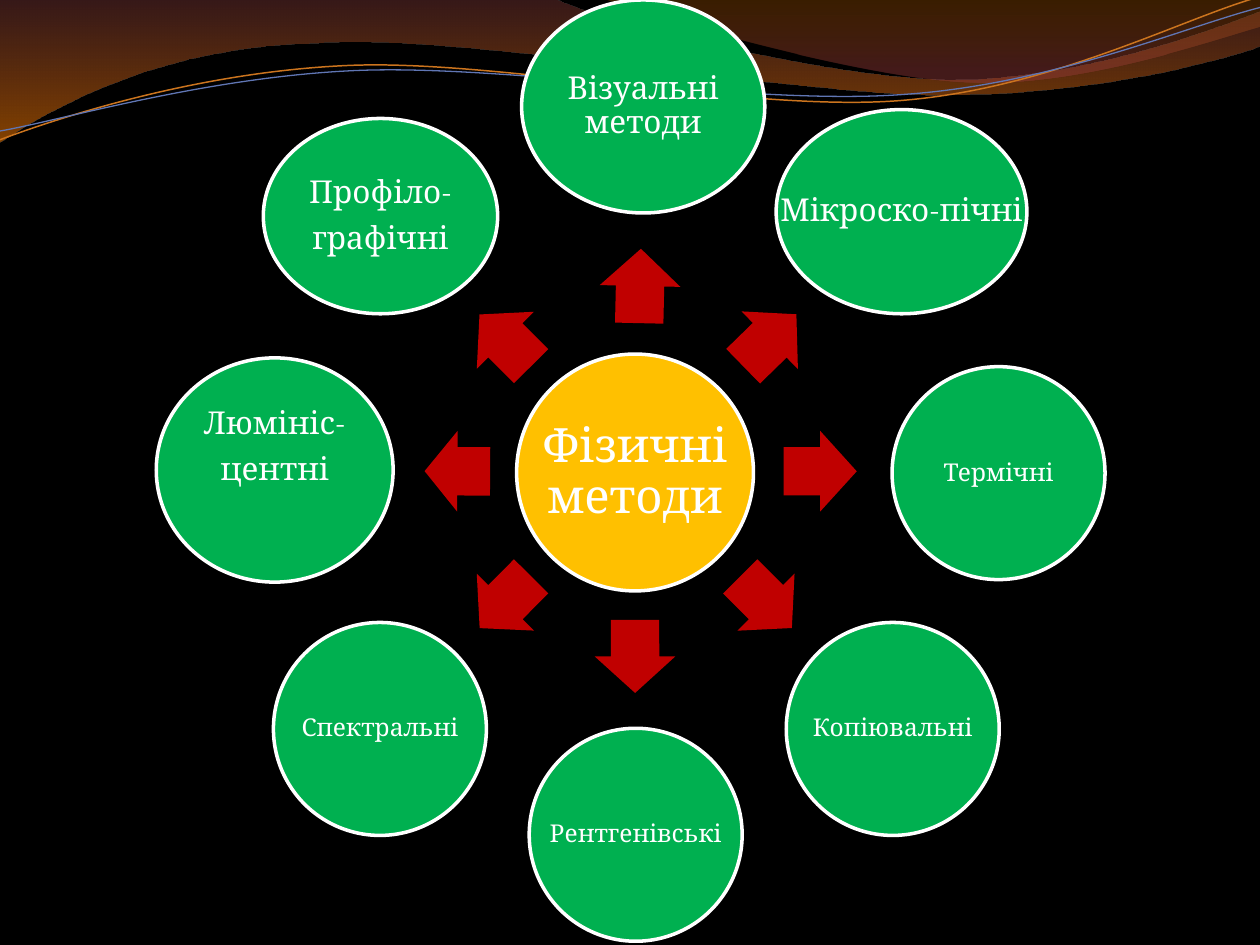
import math
from lxml import etree
from pptx import Presentation, util as u
from pptx.dml.color import RGBColor
from pptx.enum import shapes, text
from pptx.oxml.ns import qn

COLORS = {
    "back": "000000", "white": "FFFFFF", "hub": "FFC000", "method": "00B050",
    "arrow": "C00000", "plum": "793737", "orange": "F07800", "amber": "C06203",
    "brick": "973B3B", "copper": "CB741E", "blue": "6076B4",
}
rgb = {name: RGBColor.from_string(value) for name, value in COLORS.items()}

prs = Presentation()
prs.slide_width, prs.slide_height = u.Inches(10), u.Inches(7.5)
col = prs.slide_width / 10
row = prs.slide_height / 7.5
s = prs.slides.add_slide(prs.slide_layouts[6])
s.background.fill.solid()
s.background.fill.fore_color.rgb = rgb["back"]


def add_wave(steps, closed, tilt=0, cx=0, cy=0):
    cos, sin = math.cos(math.radians(tilt)), math.sin(math.radians(tilt))
    points = []
    for step in steps:
        for x, y in zip(step[::2], step[1::2]):
            dx, dy = x - cx, y - cy
            points.append((round((cx + dx * cos - dy * sin) * col),
                           round((cy + dx * sin + dy * cos) * row)))
    fb = s.shapes.build_freeform(*points[0])
    fb.add_line_segments(points[1:], close=closed)
    sp = fb.convert_to_shape()
    sp.shadow.inherit = False
    sp.rotation = -tilt
    nodes = iter(list(sp._element.spPr.iter(qn("a:lnTo"))))
    for step in steps[1:]:
        group = [next(nodes) for _ in step[::2]]
        if len(group) == 3:
            curve = etree.Element(qn("a:cubicBezTo"))
            group[0].addprevious(curve)
            for node in group:
                curve.append(node[0])
                node.getparent().remove(node)
    return sp


def add_preset(kind, box, color):
    sp = s.shapes.add_shape(kind, *box)
    sp.shadow.inherit = False
    sp.fill.solid()
    sp.fill.fore_color.rgb = rgb[color]
    sp.line.fill.background()
    return sp


bands = [
    ([(0, 0), (4.4, -0.01), (4.76, 0.17, 6.64, 0.63, 7.58, 0.63),
      (8.53, 0.63, 9.58, 0.26, 10, 0.09), (10.01, 0.36),
      (9.83, 0.44, 8.7, 0.76, 7.46, 0.75), (6.22, 0.75, 3.82, 0.28, 2.57, 0.34),
      (1.29, 0.36, 0.46, 0.83, -0.01, 1.13), (0, 0)],
     [(0, "plum", 45), (1, "orange", 55)]),
    ([(4.79, -0.01), (5.09, 0.11, 6.82, 0.62, 7.69, 0.65),
      (8.56, 0.69, 9.61, 0.32, 10, 0.21), (10, 0), (4.79, -0.01)],
     [(0, "amber", 30), (0.8, "brick", 45)]),
]
for steps, stops in bands:
    sp = add_wave(steps, True)
    sp.line.fill.background()
    sp.fill.gradient()
    sp.fill.gradient_angle = 270
    for stop, (position, color, _) in zip(sp.fill.gradient_stops, stops):
        stop.position = position
        stop.color.rgb = rgb[color]
    for node, (_, _, opacity) in zip(sp._element.spPr.iter(qn("a:srgbClr")), stops):
        etree.SubElement(node, qn("a:alpha"), val=str(opacity * 1000))

threads = [
    ([(0, 1.11), (0.48, 0.93, 1.58, 0.57, 2.77, 0.52), (3.95, 0.47, 5.93, 0.89, 7.13, 0.8),
      (8.33, 0.71, 9.38, 0.15, 9.98, -0.02)], "copper", 0.85, 0.57),
    ([(0, 1.04), (0.47, 0.96, 1.64, 0.61, 2.83, 0.56), (4.03, 0.51, 5.97, 0.84, 7.17, 0.75),
      (8.36, 0.67, 9.41, 0.21, 10, 0.06)], "blue", 0.75, 0.59),
]
for steps, color, width, middle in threads:
    sp = add_wave(steps, False, 2.7, 5, middle)
    sp.fill.background()
    sp.line.color.rgb = rgb[color]
    sp.line.width = u.Pt(width)

hub_x, hub_y, reach = 5.05, 3.74, 1.47
arrow_h = 0.64
circles = [
    (["Фізичні методи"], 4.1, 2.81, 1.88, 1.88, 27, "hub", None, 0, 0, 0),
    (["Візуальні методи"], 4.14, 0, 1.93, 1.69, 18, "method", 271.3, 0.03, 0.59, 0),
    (["Мікроско-пічні"], 6.16, 0.87, 1.99, 1.62, 18, "method", 315.7, 0.02, 0.59, 0),
    (["Термічні"], 7.08, 2.91, 1.69, 1.69, 14, "method", 0.1, -0.01, 0.58, 0),
    (["Копіювальні"], 6.24, 4.94, 1.69, 1.69, 14, "method", 45, -0.01, 0.58, 0),
    (["Рентгенівські"], 4.2, 5.78, 1.69, 1.69, 14, "method", 89.9, -0.01, 0.58, 0),
    (["Спектральні"], 2.17, 4.94, 1.69, 1.69, 14, "method", 134.8, 0, 0.58, 0),
    (["Люмініс-", "центні"], 1.24, 2.84, 1.88, 1.78, 18, "method", 180.3, 0.05, 0.52, 0.36),
    (["Профіло-", "графічні"], 2.09, 0.94, 1.86, 1.55, 18, "method", 225, 0, 0.58, 0),
]
for lines, x, y, w, h, size, color, turn, shift, length, lift in circles:
    if turn is not None:
        spoke = math.radians(round(turn / 45) * 45)
        arrow_x = hub_x + reach * math.cos(spoke) + shift - length / 2
        arrow_y = hub_y + reach * math.sin(spoke) - arrow_h / 2
        box = [round(v) for v in (arrow_x * col, arrow_y * row, length * col, arrow_h * row)]
        sp = add_preset(shapes.MSO_SHAPE.RIGHT_ARROW, box, "arrow")
        sp.adjustments[0], sp.adjustments[1] = 0.6, 0.5
        sp.rotation = turn
    box = [round(v) for v in (x * col, y * row, w * col, h * row)]
    sp = add_preset(shapes.MSO_SHAPE.OVAL, box, color)
    sp.line.color.rgb = rgb["white"]
    sp.line.width = u.Pt(2)
    tf = s.shapes.add_textbox(*box).text_frame
    inset = round(0.03 * col)
    frame_format = {"word_wrap": True, "vertical_anchor": text.MSO_ANCHOR.MIDDLE,
                    "margin_left": inset, "margin_right": inset, "margin_top": inset,
                    "margin_bottom": inset + round(lift * row)}
    for name, value in frame_format.items():
        setattr(tf, name, value)
    for i, line in enumerate(lines):
        p = tf.paragraphs[0] if i == 0 else tf.add_paragraph()
        para_format = {"text": line, "alignment": text.PP_ALIGN.CENTER, "line_spacing": 0.9,
                       "space_after": u.Pt(round(size * 0.4))}
        for name, value in para_format.items():
            setattr(p, name, value)
        r = p.runs[0]
        for name, value in {"name": "Cambria", "size": u.Pt(size)}.items():
            setattr(r.font, name, value)
        r.font.color.rgb = rgb["white"]

prs.save("out.pptx")
